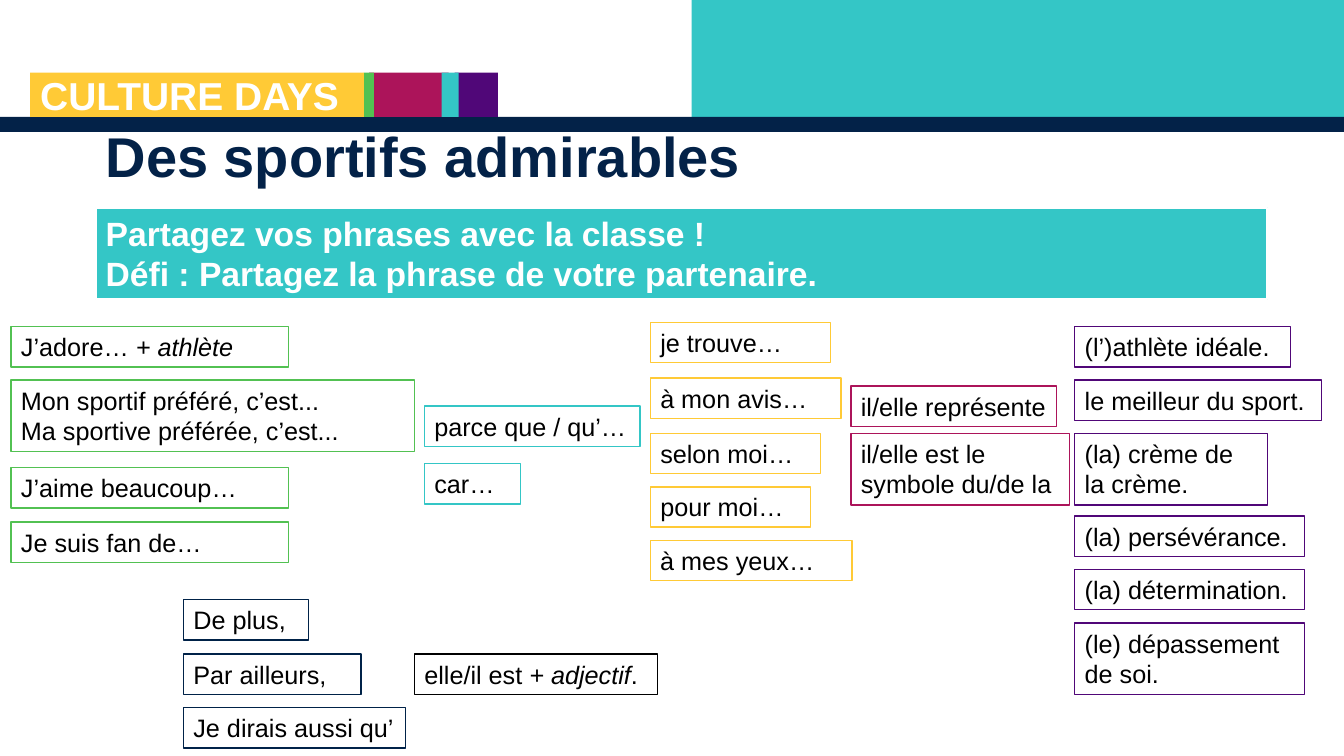
from pptx import Presentation
from pptx.dml.color import RGBColor
from pptx.enum.shapes import MSO_SHAPE
from pptx.enum.text import MSO_ANCHOR, MSO_AUTO_SIZE, PP_ALIGN
from pptx.util import Inches, Pt

RECTANGLE = MSO_SHAPE.RECTANGLE
TOP, MIDDLE = MSO_ANCHOR.TOP, MSO_ANCHOR.MIDDLE
GROW = MSO_AUTO_SIZE.SHAPE_TO_FIT_TEXT
LEFT = PP_ALIGN.LEFT

WHITE, BLACK, NAVY = "FFFFFF", "000000", "032248"
TEAL, PURPLE, CRIMSON = "34C6C6", "500778", "AC145A"
GREEN, YELLOW, INK = "52C152", "FFCA36", "002248"

ONE_LINE, TWO_LINES = 0.4, 0.71
STRIPE_TOP, STRIPE_HEIGHT = 0.72, 0.44

# left, width, colour
STRIPES = [
    (4.51, 0.43, PURPLE),
    (3.66, 0.79, CRIMSON),
    (4.38, 0.17, TEAL),
    (3.61, 0.1, GREEN),
    (0.3, 3.31, YELLOW),
]

# outline colour, left, then (top, width, height, text) for each phrase
PHRASE_COLUMNS = [
    (GREEN, 0.11, [
        (3.24, 2.75, ONE_LINE, "J’adore… *+ athlète*"),
        (3.77, 4, TWO_LINES,
         "Mon sportif préféré, c’est...\nMa sportive préférée, c’est..."),
        (4.64, 2.75, ONE_LINE, "J’aime beaucoup…"),
        (5.18, 2.75, ONE_LINE, "Je suis fan de…"),
    ]),
    (TEAL, 4.21, [
        (4.03, 2.14, ONE_LINE, "parce que / qu’…"),
        (4.6, 0.95, ONE_LINE, "car…"),
    ]),
    (YELLOW, 6.45, [
        (3.2, 1.79, ONE_LINE, "je trouve…"),
        (3.75, 1.89, ONE_LINE, "à mon avis…"),
        (4.3, 1.69, ONE_LINE, "selon moi…"),
        (4.83, 1.59, ONE_LINE, "pour moi…"),
        (5.36, 2, ONE_LINE, "à mes yeux…"),
    ]),
    (CRIMSON, 8.44, [
        (3.83, 2.04, ONE_LINE, "il/elle représente"),
        (4.3, 2.17, TWO_LINES, "il/elle est le symbole du/de la"),
    ]),
    (PURPLE, 10.66, [
        (3.24, 2.14, ONE_LINE, "(l’)athlète idéale."),
        (3.77, 2.45, ONE_LINE, "le meilleur du sport."),
        (4.3, 1.91, TWO_LINES, "(la) crème de la crème."),
        (5.12, 2.28, ONE_LINE, "(la) persévérance."),
        (5.65, 2.28, ONE_LINE, "(la) détermination."),
        (6.18, 2.28, TWO_LINES, "(le) dépassement de soi."),
    ]),
    (INK, 1.82, [
        (5.95, 1.24, ONE_LINE, "De plus,"),
        (6.49, 1.76, ONE_LINE, "Par ailleurs,"),
        (7.02, 2.2, ONE_LINE, "Je dirais aussi qu’"),
    ]),
    (BLACK, 4.11, [
        (6.49, 2.41, ONE_LINE, "elle/il est *+ adjectif*."),
    ]),
]


def rgb(hex_colour):
    return RGBColor.from_string(hex_colour)


def add_block(slide, box, fill, outline=None, outline_width=1):
    block = slide.shapes.add_shape(RECTANGLE, *map(Inches, box))
    block.shadow.inherit = False
    block.fill.solid()
    block.fill.fore_color.rgb = rgb(fill)
    if outline:
        block.line.color.rgb = rgb(outline)
        block.line.width = Pt(outline_width)
    else:
        block.line.fill.background()
    return block


def write_text(holder, text, size, colour, bold=False, spacing=1.0,
               anchor=TOP, fit=None):
    """Fill a shape: newlines split paragraphs, *stars* mark italics."""
    frame = holder.text_frame
    frame_format = {"word_wrap": True, "vertical_anchor": anchor}
    if fit is not None:
        frame_format["auto_size"] = fit
    for name, value in frame_format.items():
        setattr(frame, name, value)
    for index, line in enumerate(text.split("\n")):
        paragraph = frame.add_paragraph() if index else frame.paragraphs[0]
        paragraph.alignment = LEFT
        paragraph.line_spacing = spacing
        for position, part in enumerate(line.split("*")):
            if not part:
                continue
            run = paragraph.add_run()
            run.text = part
            run.font.color.rgb = rgb(colour)
            font_format = {"name": "Arial", "size": Pt(size), "bold": bold,
                           "italic": position % 2 == 1}
            for name, value in font_format.items():
                setattr(run.font, name, value)


def add_label(slide, box, text, size, colour, **layout):
    label = slide.shapes.add_textbox(*map(Inches, box))
    write_text(label, text, size, colour, bold=True, **layout)


def add_header(slide):
    add_block(slide, (6.86, 0, 6.48, 1.16), TEAL)
    add_block(slide, (0, 1.16, 13.33, 0.15), NAVY)
    for left, width, colour in STRIPES:
        add_block(slide, (left, STRIPE_TOP, width, STRIPE_HEIGHT), colour)
    add_label(slide, (0.3, 0.75, 4.15, 0.48), "CULTURE DAYS", 27.8, WHITE,
              spacing=0.8)


def add_banner(slide, text):
    banner = add_block(slide, (0.95, 2.06, 11.62, 0.91), TEAL, WHITE, 1.5)
    write_text(banner, text, 24, WHITE, bold=True, fit=GROW)


def add_phrase(slide, box, text, outline):
    phrase = add_block(slide, box, WHITE, outline)
    write_text(phrase, text, 18, BLACK, fit=GROW)


def main():
    deck = Presentation()
    deck.slide_width, deck.slide_height = Inches(13.33), Inches(7.5)
    slide = deck.slides.add_slide(deck.slide_layouts[6])

    add_header(slide)
    add_label(slide, (0.95, 0.86, 11.5, 1.45), "Des sportifs admirables", 40,
              NAVY, spacing=0.9, anchor=MIDDLE)
    add_banner(slide, "Partagez vos phrases avec la classe !\n"
                      "Défi : Partagez la phrase de votre partenaire.")
    for outline, left, phrases in PHRASE_COLUMNS:
        for top, width, height, text in phrases:
            add_phrase(slide, (left, top, width, height), text, outline)

    deck.save("out.pptx")


if __name__ == "__main__":
    main()
